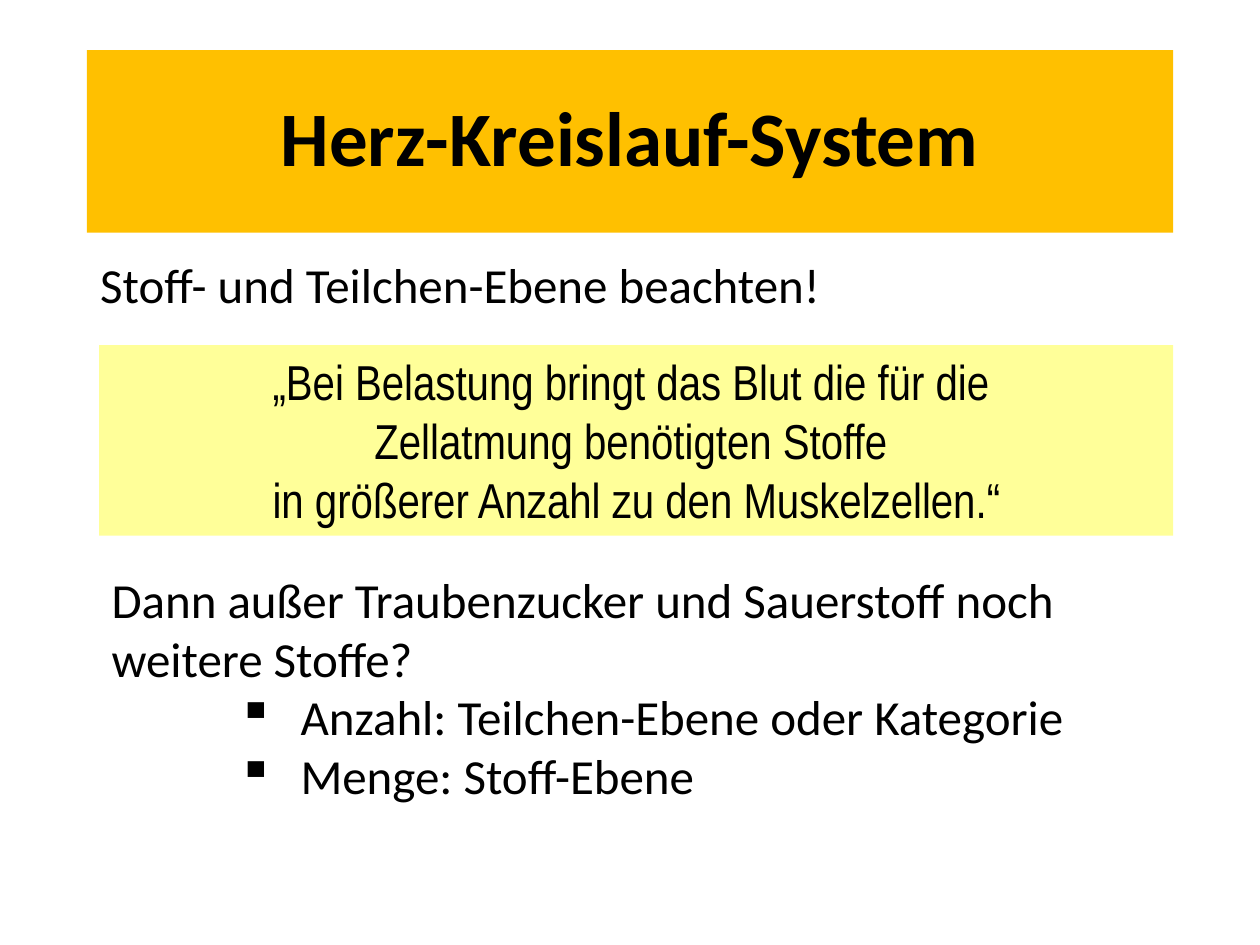
from dataclasses import dataclass

from lxml import etree
from pptx import Presentation
from pptx.dml.color import RGBColor
from pptx.enum.shapes import MSO_SHAPE
from pptx.enum.text import MSO_ANCHOR, PP_ALIGN
from pptx.oxml.ns import qn
from pptx.util import Cm, Pt

RECT = MSO_SHAPE.RECTANGLE
TOP, MIDDLE = MSO_ANCHOR.TOP, MSO_ANCHOR.MIDDLE
LEFT, CENTER = PP_ALIGN.LEFT, PP_ALIGN.CENTER


@dataclass(frozen=True)
class Theme:
    ink: RGBColor = RGBColor(0x00, 0x00, 0x00)
    title_fill: RGBColor = RGBColor(0xFF, 0xC0, 0x00)
    quote_fill: RGBColor = RGBColor(0xFF, 0xFF, 0x99)
    body_font: str = "Calibri"
    quote_font: str = "Arial Narrow"
    title_size: Pt = Pt(44)
    body_size: Pt = Pt(28)


THEME = Theme()


def add_panel(slide, box, fill):
    s = slide.shapes.add_shape(RECT, *map(Cm, box))
    s.shadow.inherit = False
    s.fill.solid()
    s.fill.fore_color.rgb = fill
    s.line.fill.background()
    return s


def write_lines(s, lines, font=THEME.body_font, size=THEME.body_size,
                bold=False, align=LEFT, anchor=TOP):
    tf = s.text_frame
    tf.word_wrap = True
    tf.vertical_anchor = anchor
    tf.text = "\n".join(lines)
    for p in tf.paragraphs:
        p.alignment = align
        p.font.name = font
        p.font.size = size
        p.font.bold = bold
        p.font.color.rgb = THEME.ink
    return tf.paragraphs


def set_bullet(p, char="▪", margin=Cm(3.81), hanging=Cm(1.27)):
    pPr = p._p.get_or_add_pPr()
    pPr.set("marL", str(margin))
    pPr.set("indent", str(-hanging))
    bullet = etree.Element(qn("a:buChar"), char=char)
    pPr.insert_element_before(bullet, "a:tabLst", "a:defRPr", "a:extLst")


def add_title(slide, box, text):
    s = add_panel(slide, box, THEME.title_fill)
    p, = write_lines(s, [text], size=THEME.title_size, bold=True,
                     align=CENTER, anchor=MIDDLE)
    p.line_spacing = 0.9


def add_quote(slide, box, lines):
    s = add_panel(slide, box, THEME.quote_fill)
    write_lines(s, lines, font=THEME.quote_font, align=CENTER)


def add_text(slide, box, text, bullets=()):
    s = slide.shapes.add_textbox(*map(Cm, box))
    for p in write_lines(s, [text, *bullets])[1:]:
        p.level = 2
        set_bullet(p)


def main():
    prs = Presentation()
    prs.slide_width, prs.slide_height = Cm(25.4), Cm(19.05)
    slide = prs.slides.add_slide(prs.slide_layouts[6])

    add_title(slide, (1.75, 1.01, 21.9, 3.68), "Herz-Kreislauf-System")
    add_text(slide, (1.77, 5, 21.9, 1.45), "Stoff- und Teilchen-Ebene beachten!")
    add_quote(slide, (2, 6.96, 21.65, 3.84), [
        "„Bei Belastung bringt das Blut die für die ",
        "Zellatmung benötigten Stoffe ",
        "in größerer Anzahl zu den Muskelzellen.“",
    ])
    add_text(slide, (2, 11.35, 21.65, 5.05),
             "Dann außer Traubenzucker und Sauerstoff noch weitere Stoffe?",
             ["Anzahl: Teilchen-Ebene oder Kategorie", "Menge: Stoff-Ebene"])

    prs.save("out.pptx")


if __name__ == "__main__":
    main()
